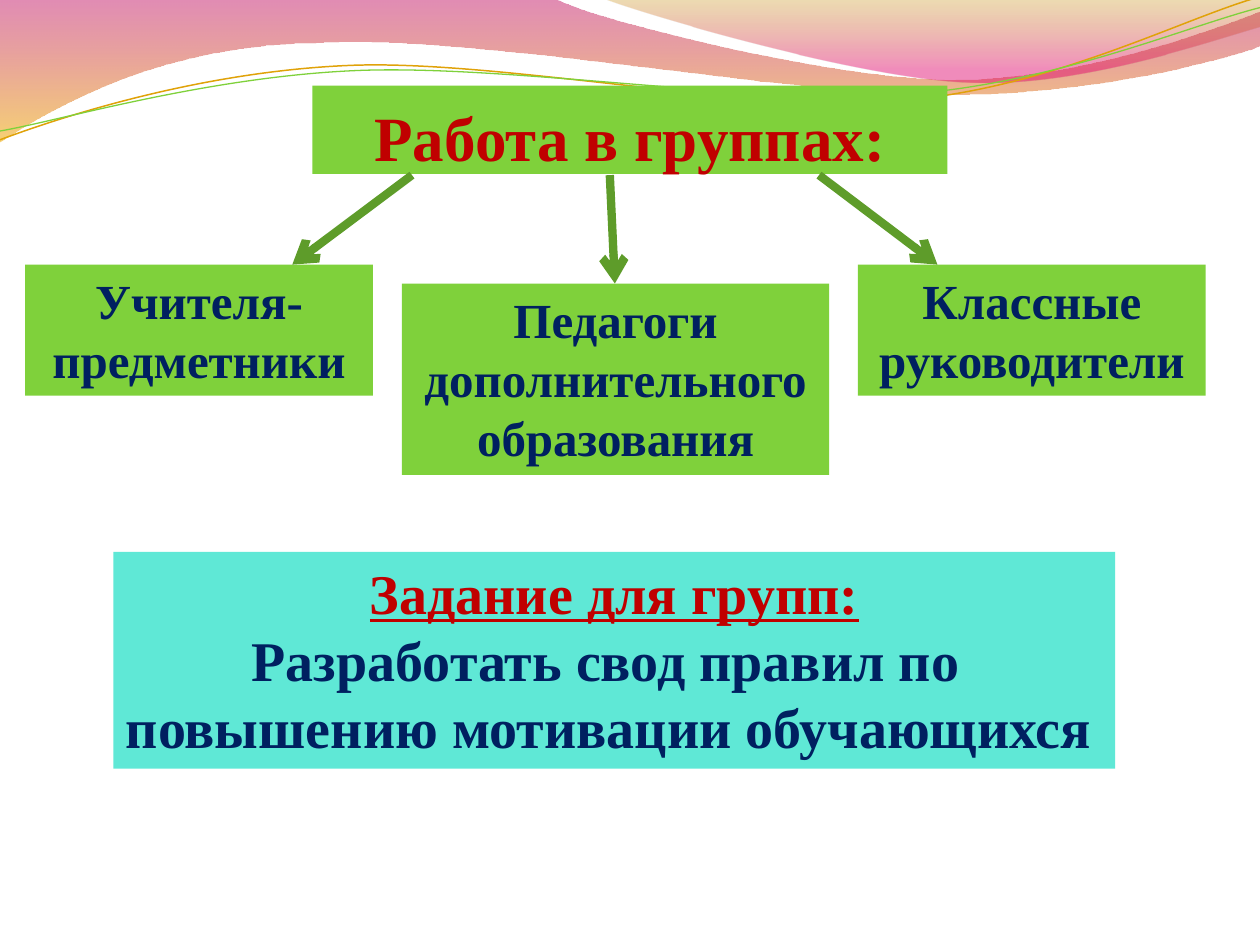
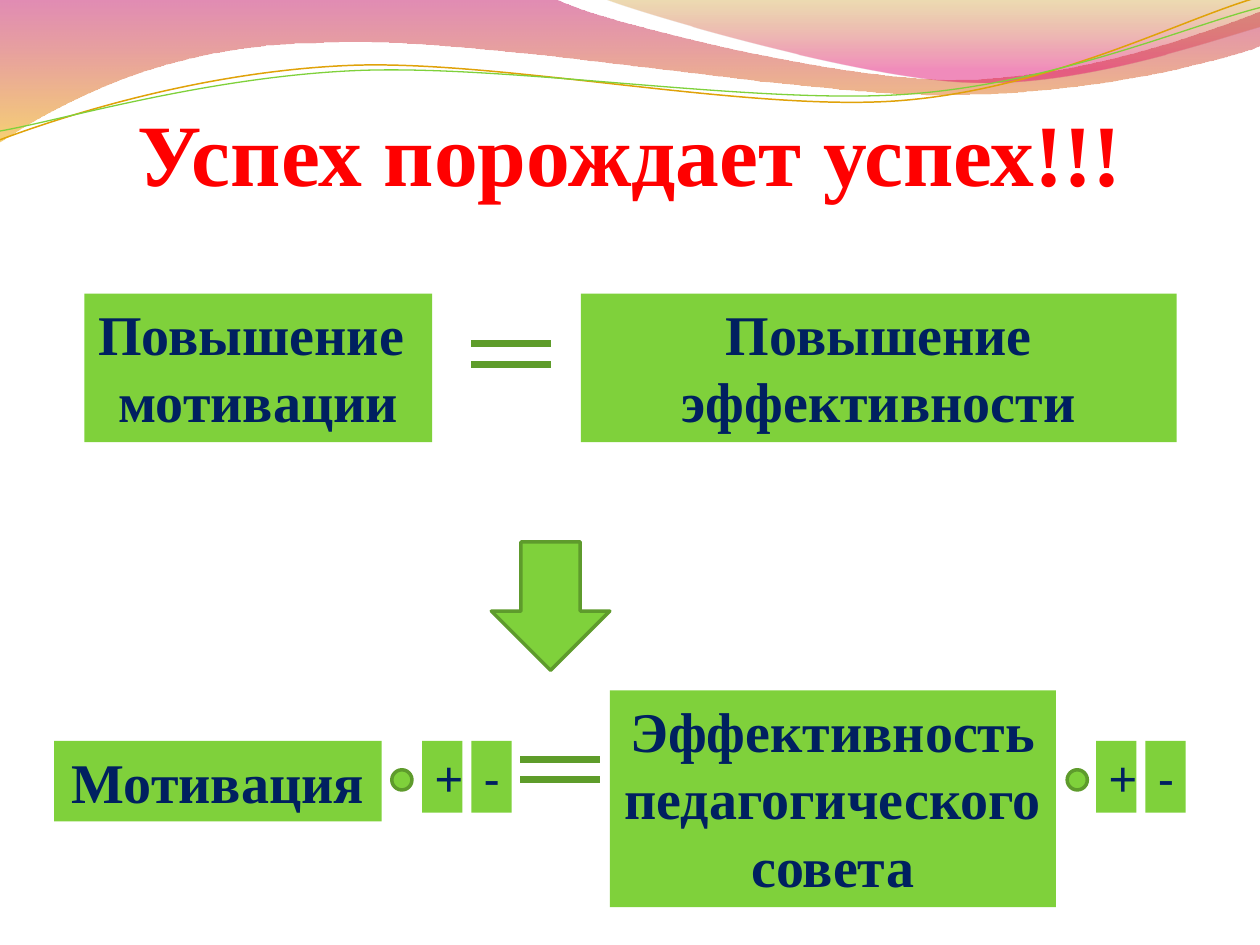
from math import cos, radians, sin
from lxml import etree
from pptx import Presentation
from pptx.dml.color import RGBColor
from pptx.enum.shapes import MSO_CONNECTOR, MSO_SHAPE
from pptx.enum.text import MSO_ANCHOR, MSO_AUTO_SIZE, PP_ALIGN
from pptx.oxml import parse_xml
from pptx.oxml.ns import qn
from pptx.util import Inches, Pt

NS = "http://schemas.openxmlformats.org/drawingml/2006/main"
GREEN, AQUA, DARK, EDGE = "7FD13B", "5FE8D6", "5E9C2A", "5E9B2C"
NAVY, WINE, RED = "002060", "C00000", "FF0000"
CENTER, LEFT = PP_ALIGN.CENTER, PP_ALIGN.LEFT

# Text styles: font attributes, colour
SERIF = dict(name="Times New Roman", bold=True)
HEAD = (dict(SERIF, size=Pt(36)), WINE)
CHEER = (dict(SERIF, size=Pt(50)), RED)
GROUP = (dict(SERIF, size=Pt(28)), NAVY)
BODY = (dict(SERIF, size=Pt(32)), NAVY)
TASK = (dict(SERIF, size=Pt(32), underline=True), WINE)
SIGN = (dict(name="Arial", size=Pt(28)), NAVY)

# Waves: place, start, curves or straight points, gradient stops (place, colour, alpha)
BANDS = [
    ((-0.01, -0.01, 10.02, 1.14), (0, -0.01),
     [(4.4, -0.01), (4.76, 0.17, 6.64, 0.63, 7.58, 0.63),
      (8.53, 0.63, 9.58, 0.26, 10, 0.09), (10.01, 0.36),
      (9.83, 0.44, 8.7, 0.76, 7.46, 0.75), (6.22, 0.75, 3.82, 0.28, 2.57, 0.34),
      (1.29, 0.35, 0.46, 0.83, -0.01, 1.13), (0, -0.01)],
     [(0, "BD0059", 45), (100, "F0AB00", 55)]),
    ((4.79, -0.01, 5.21, 0.7), (4.79, -0.01),
     [(5.09, 0.11, 6.82, 0.62, 7.69, 0.65), (8.56, 0.69, 9.61, 0.32, 10, 0.21),
      (10, 0), (4.79, -0.01)],
     [(0, "C38B00", 30), (80, "E1006B", 45)]),
]
# Thin waves: place before the tilt, start, curves, colour, width
TILT = -2.7
CURVES = [
    ((-0.02, 0.22, 10.02, 0.71), (0, 1.11),
     [(0.48, 0.93, 1.58, 0.57, 2.77, 0.52), (3.95, 0.47, 5.93, 0.89, 7.13, 0.8),
      (8.33, 0.71, 9.38, 0.15, 9.98, -0.02)], "E0A209", 0.85),
    ((-0.02, 0.3, 10.03, 0.58), (0, 1.04),
     [(0.47, 0.96, 1.64, 0.61, 2.83, 0.56), (4.03, 0.51, 5.97, 0.83, 7.17, 0.75),
      (8.36, 0.67, 9.41, 0.21, 10, 0.06)], GREEN, 0.75),
]

# Each slide: title, boxes, lines, line width, arrowhead, marks
GROUPS = dict(
    title=((2.48, 0.68, 5.04, 0.7), GREEN, [("Работа в группах:", HEAD, CENTER)]),
    boxes=[
        ((0.2, 2.1, 2.76, 1.04), GREEN, [("Учителя-предметники", GROUP, CENTER)]),
        ((6.81, 2.1, 2.76, 1.04), GREEN, [("Классные руководители", GROUP, CENTER)]),
        ((3.19, 2.25, 3.39, 1.52), GREEN,
         [("Педагоги дополнительного образования", GROUP, CENTER)]),
        ((0.9, 4.38, 7.95, 1.72), AQUA,
         [("Задание для групп:", TASK, CENTER),
          ("\tРазработать свод правил по повышению мотивации обучающихся", BODY, LEFT)]),
    ],
    lines=[(3.27, 1.39, 2.32, 2.1), (6.5, 1.39, 7.44, 2.1), (4.84, 1.39, 4.88, 2.25)],
    width=4.75, arrow=True, marks=[])

SUCCESS = dict(
    title=((0.5, 0.77, 9, 0.85), None, [("Успех порождает успех!!!", CHEER, CENTER)]),
    boxes=[
        ((0.67, 2.33, 2.76, 1.18), GREEN,
         [("Повышение ", BODY, CENTER), ("мотивации", BODY, CENTER)]),
        ((4.61, 2.33, 4.73, 1.18), GREEN, [("Повышение эффективности", BODY, CENTER)]),
        ((0.43, 5.88, 2.6, 0.64), GREEN, [("Мотивация", BODY, CENTER)]),
        ((4.84, 5.48, 3.54, 1.72), GREEN,
         [("Эффективность педагогического совета", BODY, CENTER)]),
    ] + [((x + 0.39 * i, 5.88, 0.32, 0.57), GREEN, [(sign, SIGN, CENTER)])
         for x in (3.35, 8.7) for i, sign in enumerate("+-")],
    lines=[(x, y + gap, x + 0.63, y + gap)
           for x, y in ((3.74, 2.73), (4.13, 6.03)) for gap in (0, 0.16)],
    width=4, arrow=False,
    marks=[(MSO_SHAPE.OVAL, (3.11, 6.11, 0.16, 0.16)),
           (MSO_SHAPE.OVAL, (8.47, 6.11, 0.16, 0.16)),
           (MSO_SHAPE.DOWN_ARROW, (3.9, 4.3, 0.94, 1.02))])


def paint(shape, fill=None, line=None, width=1):
    """Set flat fill and outline, either may be absent, and drop the shadow."""
    shape.shadow.inherit = False
    for part, tone in ((shape.fill, fill), (shape.line.fill, line)):
        if tone:
            part.solid()
            part.fore_color.rgb = RGBColor.from_string(tone)
        else:
            part.background()
    if line:
        shape.line.width = Pt(width)


def wave(shapes, place, start, parts, tilt=0):
    """Draw straight points and cubic curves, given as seen after the tilt."""
    left, top, wide, high = place
    midx, midy = left + wide / 2, top + high / 2
    c, s = cos(radians(-tilt)), sin(radians(-tilt))
    pen = shapes.build_freeform(Inches(left), Inches(top))
    pen.add_line_segments([(Inches(left + wide), Inches(top + high))], close=False)
    shape = pen.convert_to_shape()
    trace = shape._element.spPr.find(".//" + qn("a:path"))
    for old in list(trace):
        trace.remove(old)
    for i, part in enumerate([start] + parts):
        kind = "a:moveTo" if i == 0 else "a:lnTo" if len(part) == 2 else "a:cubicBezTo"
        move = etree.SubElement(trace, qn(kind))
        for x, y in zip(part[::2], part[1::2]):
            dx, dy = x - midx, y - midy
            etree.SubElement(move, qn("a:pt"),
                             x=str(Inches(dx * c - dy * s + wide / 2)),
                             y=str(Inches(dx * s + dy * c + high / 2)))
    if parts[-1] == start:
        etree.SubElement(trace, qn("a:close"))
    shape.rotation = tilt
    return shape


deck = Presentation()
deck.slide_width, deck.slide_height = Inches(10), Inches(7.5)
pages = [(page, deck.slides.add_slide(deck.slide_layouts[6]).shapes)
         for page in (GROUPS, SUCCESS)]

# Waves are drawn once, then handed to the master
shapes = pages[0][1]
waves = []
for place, start, parts, stops in BANDS:
    band = wave(shapes, place, start, parts)
    paint(band)
    grades = "".join(
        f'<a:gs pos="{pos * 1000}"><a:srgbClr val="{tone}">'
        f'<a:alpha val="{alpha * 1000}"/></a:srgbClr></a:gs>'
        for pos, tone, alpha in stops)
    blank = band._element.spPr.find(qn("a:noFill"))
    blank.getparent().replace(blank, parse_xml(
        f'<a:gradFill xmlns:a="{NS}"><a:gsLst>{grades}</a:gsLst>'
        '<a:lin ang="5400000" scaled="0"/></a:gradFill>'))
    waves.append(band)
for place, start, parts, tone, width in CURVES:
    curve = wave(shapes, place, start, parts, TILT)
    paint(curve, line=tone, width=width)
    waves.append(curve)
for i, shape in enumerate(waves):
    shape._element.nvSpPr.cNvPr.set("id", str(100 + i))
    deck.slide_master.shapes._spTree.append(shape._element)

for page, shapes in pages:
    for spot, fill, paras in [page["title"]] + page["boxes"]:
        box = shapes.add_shape(MSO_SHAPE.RECTANGLE, *map(Inches, spot))
        paint(box, fill)
        frame = box.text_frame
        look = dict(word_wrap=True, vertical_anchor=MSO_ANCHOR.TOP,
                    auto_size=MSO_AUTO_SIZE.SHAPE_TO_FIT_TEXT)
        if paras is page["title"][2]:
            look = dict(word_wrap=True, vertical_anchor=MSO_ANCHOR.BOTTOM,
                        margin_left=0, margin_right=0, margin_bottom=0,
                        margin_top=Inches(0.05))
        for key, value in look.items():
            setattr(frame, key, value)
        for i, (text, (style, tone), align) in enumerate(paras):
            para = frame.add_paragraph() if i else frame.paragraphs[0]
            para.alignment = align
            if text.startswith("\t"):
                tabs = etree.SubElement(para._p.get_or_add_pPr(), qn("a:tabLst"))
                etree.SubElement(tabs, qn("a:tab"), pos=str(Inches(1)), algn="l")
            run = para.add_run()
            run.text = text
            for key, value in style.items():
                setattr(run.font, key, value)
            run.font.color.rgb = RGBColor.from_string(tone)

    for ends in page["lines"]:
        link = shapes.add_connector(MSO_CONNECTOR.STRAIGHT, *map(Inches, ends))
        link.line.color.rgb = RGBColor.from_string(DARK)
        link.line.width = Pt(page["width"])
        if page["arrow"]:
            etree.SubElement(link.line._get_or_add_ln(), qn("a:tailEnd"), type="arrow")
        etree.SubElement(link._element.spPr, qn("a:effectLst"))

    for kind, spot in page["marks"]:
        paint(shapes.add_shape(kind, *map(Inches, spot)), GREEN, EDGE, 2)

deck.save("out.pptx")
